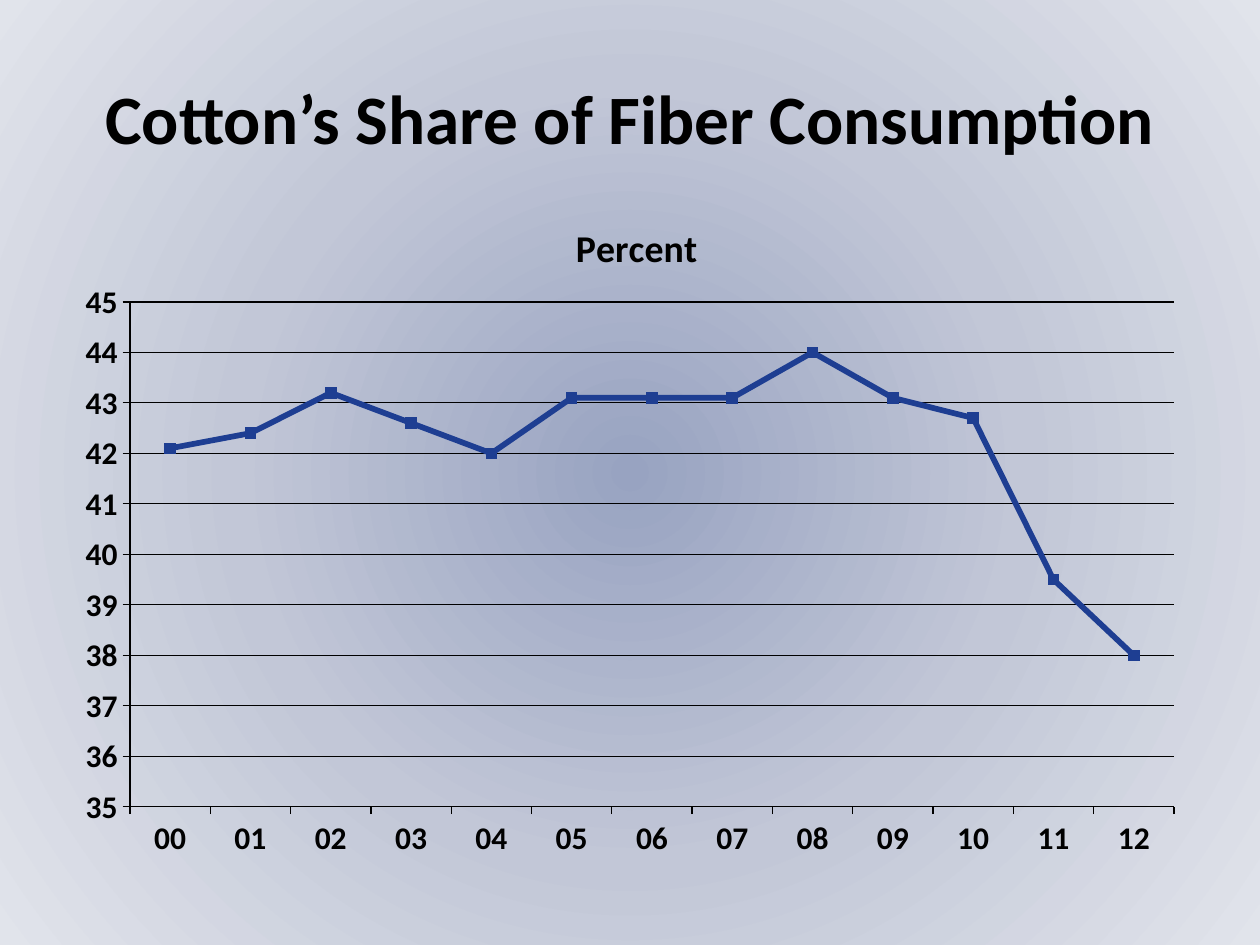
from typing import NamedTuple

from lxml import etree
from pptx import Presentation
from pptx import util as u
from pptx.chart.data import CategoryChartData
from pptx.dml.color import RGBColor
from pptx.enum import chart as ch
from pptx.enum import text
from pptx.oxml import parse_xml
from pptx.oxml.ns import nsdecls, qn

PX_PER_INCH = 126
FONT = "Calibri"
BLACK = RGBColor(0x00, 0x00, 0x00)
NAVY = RGBColor(0x1E, 0x3E, 0x92)
BACKDROP = ((0, RGBColor(0x98, 0xA3, 0xC1)),
            (50, RGBColor(0xC2, 0xC7, 0xD7)),
            (100, RGBColor(0xE1, 0xE4, 0xEB)))

YEARS = [f"{year:02d}" for year in range(13)]
SHARES = [42.1, 42.4, 43.2, 42.6, 42, 43.1, 43.1, 43.1, 44, 43.1, 42.7, 39.5, 38]


class Box(NamedTuple):
    x: int
    y: int
    w: int
    h: int


TITLE = Box(63, 38, 1134, 158)
CHART = Box(63, 179, 1134, 693)
PLOT = Box(130, 302, 1044, 505)
HEADING = Box(569, 214, 121, 42)


def px(n: int) -> u.Emu:
    return u.Emu(round(n * 914400 / PX_PER_INCH))


def style_font(font, size: float, color: RGBColor = BLACK, bold: bool = True) -> None:
    font.name, font.size, font.bold = FONT, u.Pt(size), bold
    font.color.rgb = color


def write(tf, words: str, align=text.PP_ALIGN.CENTER, **fmt) -> None:
    p = tf.paragraphs[0]
    p.alignment = align
    r = p.add_run()
    r.text = words
    style_font(r.font, **fmt)


def style_line(line, color: RGBColor, width: float) -> None:
    line.color.rgb = color
    line.width = u.Pt(width)


def set_layout(parent, index: int, box: Box, sized: bool) -> None:
    """Place a chart part by fractions of the chart frame."""
    for old in parent.findall(qn("c:layout")):
        parent.remove(old)
    layout = etree.Element(qn("c:layout"))
    manual = etree.SubElement(layout, qn("c:manualLayout"))
    values = [("xMode", "edge"), ("yMode", "edge"),
              ("x", (box.x - CHART.x) / CHART.w), ("y", (box.y - CHART.y) / CHART.h)]
    if sized:
        values.insert(0, ("layoutTarget", "inner"))
        values += [("w", box.w / CHART.w), ("h", box.h / CHART.h)]
    for tag, value in values:
        etree.SubElement(manual, qn(f"c:{tag}")).set("val", str(value))
    parent.insert(index, layout)


def paint_background(s) -> None:
    """Radial gradient spreading from the slide centre."""
    stops = "".join(f'<a:gs pos="{pos * 1000}"><a:srgbClr val="{color}"/></a:gs>'
                    for pos, color in BACKDROP)
    fill = s.background.fill
    fill.solid()
    solid = s.element.find(".//" + qn("a:solidFill"))
    solid.getparent().replace(solid, parse_xml(
        f'<a:gradFill {nsdecls("a")} rotWithShape="1"><a:gsLst>{stops}</a:gsLst>'
        '<a:path path="circle"><a:fillToRect l="50000" t="50000" r="50000" b="50000"/>'
        '</a:path></a:gradFill>'))


def add_title(s) -> None:
    sp = s.shapes.title
    sp.left, sp.top, sp.width, sp.height = map(px, TITLE)
    tf = sp.text_frame
    tf.word_wrap = True
    tf.auto_size = text.MSO_AUTO_SIZE.NONE
    tf.vertical_anchor = text.MSO_ANCHOR.MIDDLE
    write(tf, "Cotton’s Share of Fiber Consumption", size=39.6)


def add_share_chart(s) -> None:
    data = CategoryChartData(number_format="0.0")
    data.categories = YEARS
    data.add_series("Series 1", SHARES)
    chart = s.shapes.add_chart(ch.XL_CHART_TYPE.LINE_MARKERS, *map(px, CHART), data).chart
    style_font(chart.font, 18)
    chart.has_legend = False

    # Heading and plot area
    chart.has_title = True
    write(chart.chart_title.text_frame, "Percent", size=21.6)
    chart.chart_title.include_in_layout = False
    set_layout(chart.element.find(".//" + qn("c:title")), 1, HEADING, sized=False)
    set_layout(chart.element.find(".//" + qn("c:plotArea")), 0, PLOT, sized=True)

    # Axes
    for axis in (chart.category_axis, chart.value_axis):
        axis.major_tick_mark = ch.XL_TICK_MARK.OUTSIDE
        axis.minor_tick_mark = ch.XL_TICK_MARK.NONE
        style_line(axis.format.line, BLACK, 0.75)
    axis = chart.value_axis
    axis.minimum_scale, axis.maximum_scale, axis.major_unit = 35, 45, 1
    axis.tick_labels.number_format = "#,##0"
    axis.tick_labels.number_format_is_linked = False
    axis.has_major_gridlines = True
    style_line(axis.major_gridlines.format.line, BLACK, 0.75)

    # Series
    plot = chart.plots[0]
    plot.vary_by_categories = False
    series = plot.series[0]
    series.smooth = False
    style_line(series.format.line, NAVY, 3.25)
    marker = series.marker
    marker.style, marker.size = ch.XL_MARKER_STYLE.SQUARE, 6
    marker.format.fill.solid()
    marker.format.fill.fore_color.rgb = NAVY
    marker.format.line.color.rgb = NAVY


def main() -> None:
    prs = Presentation()
    prs.slide_width, prs.slide_height = px(1260), px(945)
    s = prs.slides.add_slide(prs.slide_layouts[5])
    paint_background(s)
    add_title(s)
    add_share_chart(s)
    prs.save("out.pptx")


if __name__ == "__main__":
    main()
